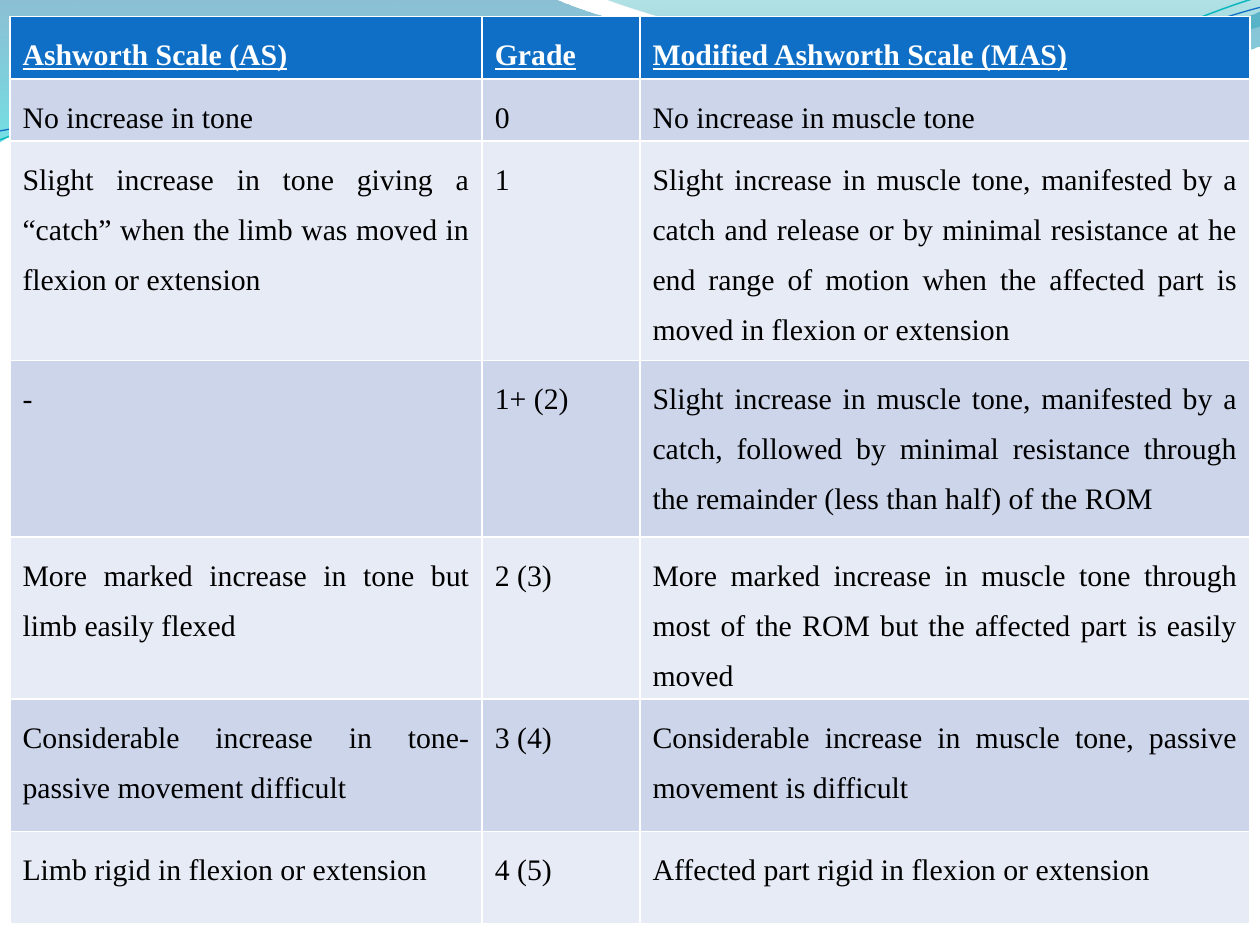
from lxml.etree import SubElement as Sub
from pptx import Presentation
from pptx.dml.color import RGBColor
from pptx.enum.text import PP_ALIGN as Align
from pptx.oxml.ns import qn
from pptx.util import Cm, Pt

FONT = "Times New Roman"
WHITE = RGBColor(0xFF, 0xFF, 0xFF)
BLACK = RGBColor(0, 0, 0)
BLUE = RGBColor(0x0F, 0x6F, 0xC6)
BANDS = RGBColor(0xCC, 0xD5, 0xEA), RGBColor(0xE7, 0xEB, 0xF5)
TEAL = RGBColor(0x0A, 0xB8, 0xBF)
DEEP = (0, RGBColor(0, 0x74, 0xA1), 45), (1, RGBColor(0, 0xC6, 0xCF), 55)
PALE = (0, RGBColor(0, 0xA1, 0xA9), 30), (0.8, RGBColor(0, 0x8B, 0xBF), 45)

COLS = 9.52, 3.18, 12.3
ROWS = 1.07, 1.07, 4.42, 3.56, 2.77, 2.67, 1.87
SCALE = [
    ("Ashworth Scale (AS)", "Grade", "Modified Ashworth Scale (MAS)"),
    ("No increase in tone", "0", "No increase in muscle tone"),
    ("Slight increase in tone giving a “catch” when the limb was moved in "
     "flexion or extension", "1",
     "Slight increase in muscle tone, manifested by a catch and release or by "
     "minimal resistance at he end range of motion when the affected part is "
     "moved in flexion or extension"),
    ("-", "1+ (2)",
     "Slight increase in muscle tone, manifested by a catch, followed by "
     "minimal resistance through the remainder (less than half) of the ROM"),
    ("More marked increase in tone but limb easily flexed", "2 (3)",
     "More marked increase in muscle tone through most of the ROM but the "
     "affected part is easily moved"),
    ("Considerable increase in tone-passive movement difficult", "3 (4)",
     "Considerable increase in muscle tone, passive movement is difficult"),
    ("Limb rigid in flexion or extension", "4 (5)",
     "Affected part rigid in flexion or extension"),
]

BACK = [
    (0, 0), (11.18, -0.03),
    (12.09, 0.43, 16.87, 1.6, 19.25, 1.6),
    (21.67, 1.6, 24.33, 0.66, 25.4, 0.23), (25.43, 0.91),
    (24.97, 1.12, 22.1, 1.93, 18.95, 1.91),
    (15.8, 1.91, 9.7, 0.71, 6.53, 0.86),
    (3.28, 0.91, 1.17, 2.11, -0.03, 2.87), (0, 0),
]
FRONT = [
    (12.17, -0.03),
    (12.93, 0.28, 17.32, 1.57, 19.53, 1.65),
    (21.74, 1.75, 24.41, 0.81, 25.4, 0.53), (25.4, 0), (12.17, -0.03),
]
UPPER = [
    (0, 2.82),
    (1.22, 2.36, 4.01, 1.45, 7.04, 1.32),
    (10.03, 1.19, 15.06, 2.26, 18.11, 2.03),
    (21.16, 1.8, 23.83, 0.38, 25.35, -0.05),
]
LOWER = [
    (0, 2.64),
    (1.19, 2.44, 4.17, 1.55, 7.19, 1.42),
    (10.24, 1.3, 15.16, 2.13, 18.21, 1.91),
    (21.23, 1.7, 23.9, 0.53, 25.4, 0.15),
]


def bend(shape, segs):
    steps = iter(list(shape._element.spPr.iter(qn("a:lnTo"))))
    for seg in segs:
        group = [next(steps) for _ in range(len(seg) // 2)]
        if len(group) == 3:
            curve = group[0].makeelement(qn("a:cubicBezTo"), {})
            group[0].addprevious(curve)
            for step in group:
                curve.append(step[0])
                step.getparent().remove(step)


def add_path(slide, segs, close):
    dots = [(Cm(x), Cm(y)) for seg in segs
            for x, y in zip(seg[::2], seg[1::2])]
    pen = slide.shapes.build_freeform(*dots[0])
    pen.add_line_segments(dots[1:], close=close)
    shape = pen.convert_to_shape()
    shape.shadow.inherit = False
    bend(shape, segs[1:])
    return shape


def add_wave(slide, segs, stops):
    shape = add_path(slide, segs, True)
    shape.line.fill.background()
    fill = shape.fill
    fill.gradient()
    fill.gradient_angle = 270
    for stop, (pos, color, _) in zip(fill.gradient_stops, stops):
        stop.position = pos
        stop.color.rgb = color
    tints = shape._element.spPr.iter(qn("a:srgbClr"))
    for tint, (_, _, alpha) in zip(list(tints), stops):
        Sub(tint, qn("a:alpha"), val=str(alpha * 1000))


def add_curve(slide, segs, color, width):
    shape = add_path(slide, segs, False)
    shape.fill.background()
    shape.line.color.rgb = color
    shape.line.width = Pt(width)


def set_cell(cell, text, row):
    head = row == 0
    cell.fill.solid()
    cell.fill.fore_color.rgb = BLUE if head else BANDS[(row - 1) % 2]
    cell.text = text
    para = cell.text_frame.paragraphs[0]
    para.alignment = Align.JUSTIFY
    para.line_spacing = 1.5
    font = para.font
    font.name, font.size = FONT, Pt(17)
    font.bold = font.underline = head
    font.color.rgb = WHITE if head else BLACK


def add_grid(slide):
    frame = slide.shapes.add_table(len(ROWS), len(COLS), Cm(0.2), Cm(0.33),
                                   Cm(sum(COLS)), Cm(sum(ROWS)))
    grid = frame.table
    for col, width in zip(grid.columns, COLS):
        col.width = Cm(width)
    for r, (height, texts) in enumerate(zip(ROWS, SCALE)):
        grid.rows[r].height = Cm(height)
        for c, text in enumerate(texts):
            set_cell(grid.cell(r, c), text, r)


def main():
    deck = Presentation()
    deck.slide_width, deck.slide_height = Cm(25.4), Cm(19.05)
    slide = deck.slides.add_slide(deck.slide_layouts[6])
    add_wave(slide, BACK, DEEP)
    add_wave(slide, FRONT, PALE)
    add_curve(slide, UPPER, TEAL, 0.85)
    add_curve(slide, LOWER, BLUE, 0.75)
    add_grid(slide)
    deck.save("out.pptx")


if __name__ == "__main__":
    main()
